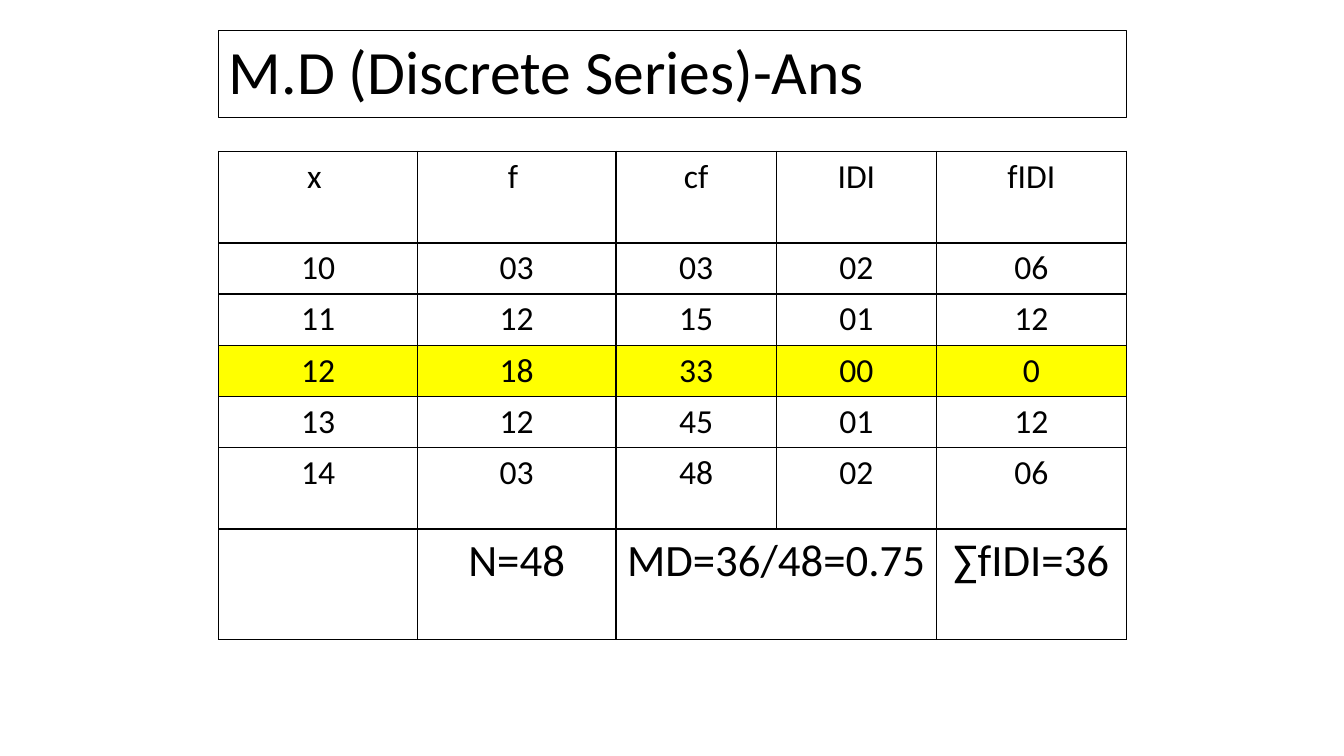
from lxml import etree
from pptx import Presentation
from pptx.dml.color import RGBColor as RGB
from pptx.enum.text import MSO_ANCHOR as Anchor, MSO_AUTO_SIZE as AutoSize, PP_ALIGN as Align
from pptx.oxml.ns import qn
from pptx.util import Inches, Pt

COLORS = {"ink": "000000", "paper": "FFFFFF", "median": "FFFF00"}
LEFT, WIDTH = 2.17, 9
COL_WIDTHS = [1.97, 1.97, 1.59, 1.59, 1.88]
ROW_HEIGHTS = [0.91] + [0.5] * 4 + [0.81, 1.1]
MEDIAN_ROW = 3
ROWS = [
    ["x ", "f ", "cf", "IDI", "fIDI"],
    ["10", "03", "03", "02", "06"],
    ["11", "12", "15", "01", "12"],
    ["12", "18", "33", "00", "0"],
    ["13", "12", "45", "01", "12"],
    ["14", "03", "48", "02", "06"],
    ["", "N=48", "MD=36/48=0.75", "", "∑fIDI=36"],
]


def write(tf, text, size=24, color="ink", font="Calibri", align=Align.CENTER, spacing=None):
    p = tf.paragraphs[0]
    p.alignment = align
    if spacing:
        p.line_spacing = spacing
    r = p.add_run()
    r.text = text
    r.font.name = font
    r.font.size = Pt(size)
    r.font.color.rgb = RGB.from_string(COLORS[color])


class Deck:
    def __init__(self, prs):
        self.slide = prs.slides.add_slide(prs.slide_layouts[5])

    def fill(self, item, color="paper"):
        item.fill.solid()
        item.fill.fore_color.rgb = RGB.from_string(COLORS[color])

    def title(self, text, top, height):
        sp = self.slide.shapes.title
        sp.left, sp.top = Inches(LEFT), Inches(top)
        sp.width, sp.height = Inches(WIDTH), Inches(height)
        self.fill(sp)
        sp.line.color.rgb = RGB.from_string(COLORS["ink"])
        sp.line.width = Pt(0.75)
        tf = sp.text_frame
        tf.word_wrap = True
        tf.auto_size = AutoSize.NONE
        tf.vertical_anchor = Anchor.MIDDLE
        write(tf, text, size=44, align=Align.LEFT, spacing=0.9)

    def borders(self, cell):
        tc_pr = cell._tc.get_or_add_tcPr()
        for i, side in enumerate(("a:lnL", "a:lnR", "a:lnT", "a:lnB")):
            ln = etree.Element(qn(side), w=str(Pt(1)))
            paint = etree.SubElement(ln, qn("a:solidFill"))
            etree.SubElement(paint, qn("a:srgbClr"), val=COLORS["ink"])
            tc_pr.insert(i, ln)

    def table(self, rows, top):
        frame = self.slide.shapes.add_table(
            len(rows), len(rows[0]), Inches(LEFT), Inches(top),
            Inches(WIDTH), Inches(sum(ROW_HEIGHTS)))
        table = frame.table
        table.first_row = table.horz_banding = False
        for col, width in zip(table.columns, COL_WIDTHS):
            col.width = Inches(width)
        for row, height in zip(table.rows, ROW_HEIGHTS):
            row.height = Inches(height)

        last = len(rows) - 1
        for i, row in enumerate(rows):
            for j, text in enumerate(row):
                cell = table.cell(i, j)
                self.fill(cell, "median" if i == MEDIAN_ROW else "paper")
                self.borders(cell)
                if text:
                    write(cell.text_frame, text, size=32 if i == last else 24)
        # The mean deviation spans cf and IDI
        table.cell(last, 2).merge(table.cell(last, 3))


def main():
    prs = Presentation()
    prs.slide_width, prs.slide_height = Inches(13.33), Inches(7.5)
    deck = Deck(prs)
    # Heading
    deck.title("M.D (Discrete Series)-Ans", top=0.3, height=0.87)
    # Frequency table with totals
    deck.table(ROWS, top=1.5)
    prs.save("out.pptx")


if __name__ == "__main__":
    main()
